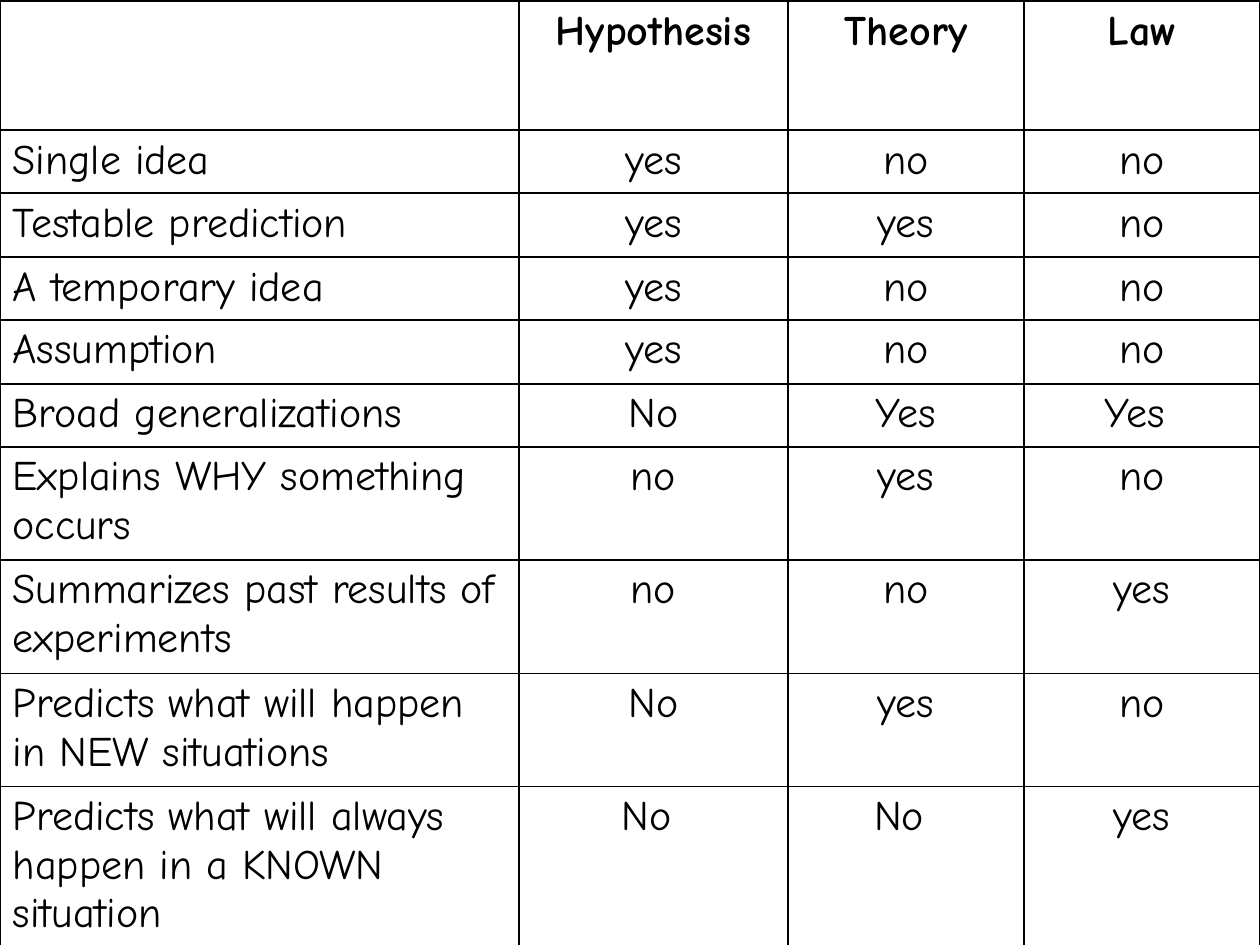
from lxml.etree import SubElement
from pptx import Presentation
from pptx.dml.color import RGBColor
from pptx.enum.text import PP_ALIGN
from pptx.oxml.ns import qn
from pptx.util import Pt

PX = 914400 // 126
BLACK = RGBColor(0, 0, 0)
FONT = "Comic Neue"
BORDER_WIDTH = Pt(1)

TABLE_LEFT, TABLE_TOP = 0, 1
COLUMN_WIDTHS = [519, 269, 236, 236]
ROWS = [
    (129, ["", "Hypothesis", "Theory", "Law"]),
    (63, ["Single idea", "yes", "no", "no"]),
    (64, ["Testable prediction", "yes", "yes", "no"]),
    (63, ["A temporary idea", "yes", "no", "no"]),
    (64, ["Assumption", "yes", "no", "no"]),
    (63, ["Broad generalizations", "No", "Yes", "Yes "]),
    (113, ["Explains WHY something occurs", "no", "yes", "no"]),
    (114, ["Summarizes past results of experiments", "no", "no", "yes"]),
    (113, ["Predicts what will happen in NEW situations", "No", "yes", "no"]),
    (164, ["Predicts what will always happen in a KNOWN situation", "No ", "No ", "yes"]),
]


def add_borders(cell):
    properties = cell._tc.get_or_add_tcPr()
    for side in ("a:lnL", "a:lnR", "a:lnT", "a:lnB"):
        line = SubElement(properties, qn(side), w=str(BORDER_WIDTH))
        fill = SubElement(line, qn("a:solidFill"))
        SubElement(fill, qn("a:srgbClr"), val=str(BLACK))


def write_cell(cell, text, bold, centred):
    add_borders(cell)
    cell.fill.background()
    paragraph = cell.text_frame.paragraphs[0]
    paragraph.text = text
    paragraph.alignment = PP_ALIGN.CENTER if centred else PP_ALIGN.LEFT
    paragraph.font.name = FONT
    paragraph.font.size = Pt(24)
    paragraph.font.bold = bold
    paragraph.font.color.rgb = BLACK


def main():
    presentation = Presentation()
    presentation.slide_width = 1260 * PX
    presentation.slide_height = 945 * PX
    slide = presentation.slides.add_slide(presentation.slide_layouts[6])

    table_height = sum(height for height, _ in ROWS)
    table = slide.shapes.add_table(
        len(ROWS), len(COLUMN_WIDTHS), TABLE_LEFT * PX, TABLE_TOP * PX,
        sum(COLUMN_WIDTHS) * PX, table_height * PX,
    ).table
    table.first_row = False
    table.horz_banding = False

    for column, width in zip(table.columns, COLUMN_WIDTHS):
        column.width = width * PX
    for row_index, (height, texts) in enumerate(ROWS):
        table.rows[row_index].height = height * PX
        for column_index, text in enumerate(texts):
            write_cell(table.cell(row_index, column_index), text,
                       bold=row_index == 0, centred=column_index > 0)

    presentation.save("out.pptx")


if __name__ == "__main__":
    main()
